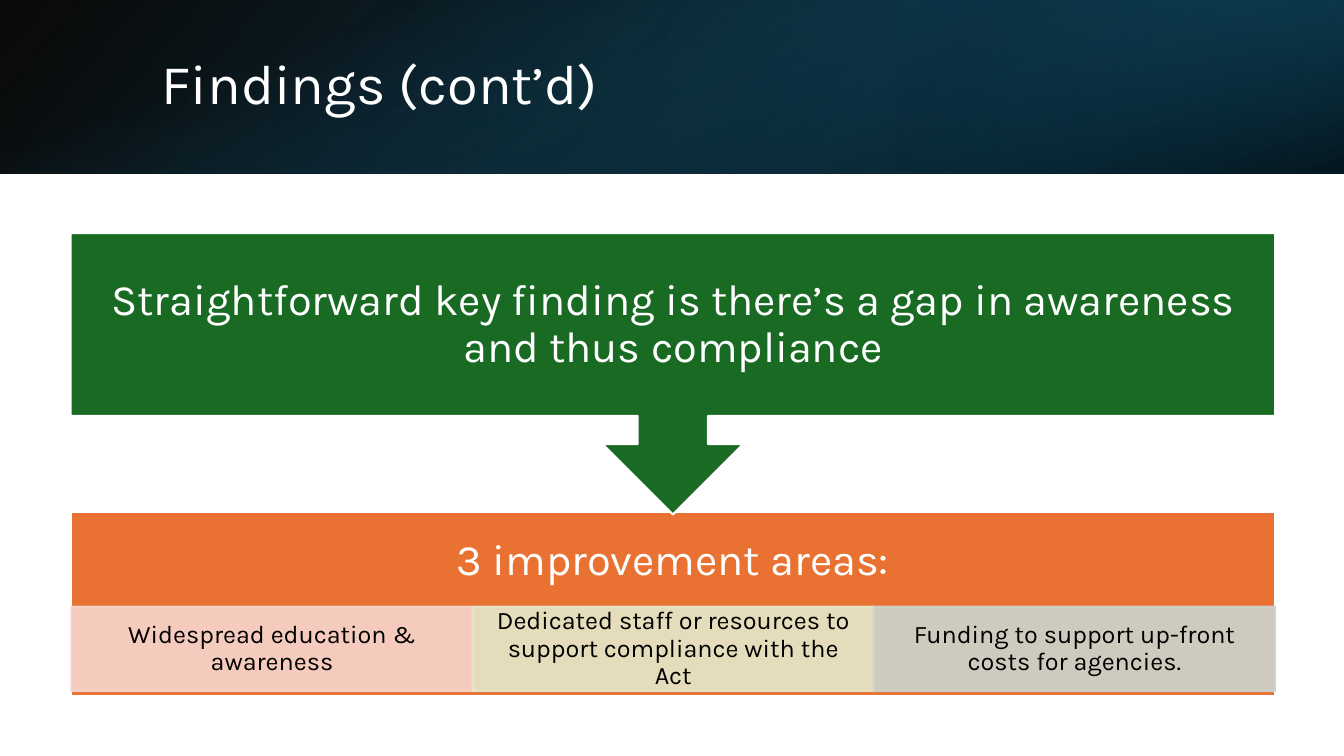
from lxml import etree
from pptx import Presentation
from pptx.dml.color import RGBColor
from pptx.enum.shapes import MSO_SHAPE
from pptx.enum.text import MSO_ANCHOR, PP_ALIGN
from pptx.oxml.ns import qn
from pptx.util import Pt

RECT = MSO_SHAPE.RECTANGLE
CALLOUT = MSO_SHAPE.DOWN_ARROW_CALLOUT
MIDDLE = MSO_ANCHOR.MIDDLE
LEFT = PP_ALIGN.LEFT
CENTER = PP_ALIGN.CENTER

WHITE = RGBColor(0xFF, 0xFF, 0xFF)
BLACK = RGBColor(0x00, 0x00, 0x00)
NAVY = RGBColor(0x0B, 0x30, 0x41)
DEEP = RGBColor(0x10, 0x48, 0x62)
TEAL = RGBColor(0x15, 0x60, 0x82)
GREEN = RGBColor(0x19, 0x6B, 0x24)
ORANGE = RGBColor(0xE9, 0x71, 0x32)
PINK = RGBColor(0xF7, 0xD5, 0xCE)
CREAM = RGBColor(0xE5, 0xE8, 0xCA)
SAGE = RGBColor(0xCC, 0xD4, 0xCD)

FONT = "Karla"
WIDE, HIGH = 960, 540
HEAD = 124
EDGE, SPAN = 50.4, 860.4
CELL = 286.6
AREAS = [
    ("Widespread education & awareness", PINK),
    ("Dedicated staff or resources to support compliance with the Act", CREAM),
    ("Funding to support up-front costs for agencies.", SAGE),
]


def place(shape, box):
    shape.left, shape.top, shape.width, shape.height = (Pt(n) for n in box)


def fade(shape, alphas):
    colors = shape.element.spPr.iter(qn("a:srgbClr"))
    for color, alpha in zip(colors, alphas):
        etree.SubElement(color, qn("a:alpha")).set("val", str(alpha * 1000))


def write(shape, text, size, color, pads, align=CENTER):
    frame = shape.text_frame
    frame.word_wrap = True
    frame.vertical_anchor = MIDDLE
    (frame.margin_left, frame.margin_top,
     frame.margin_right, frame.margin_bottom) = (Pt(n) for n in pads)
    frame.text = text
    para = frame.paragraphs[0]
    para.alignment = align
    para.line_spacing = 0.9
    font = para.runs[0].font
    font.name = FONT
    font.size = Pt(size)
    font.color.rgb = color


def add_band(slide, box, turn, flip, angle, stops):
    band = slide.shapes.add_shape(RECT, *(Pt(n) for n in box))
    band.shadow.inherit = False
    band.rotation = turn
    if flip:
        band.element.spPr.find(qn("a:xfrm")).set("flipH", "1")
    band.line.fill.background()
    band.fill.gradient()
    band.fill.gradient_angle = 360 - angle
    for stop, (spot, color, _) in zip(band.fill.gradient_stops, stops):
        stop.position = spot
        stop.color.rgb = color
    fade(band, [alpha for _, _, alpha in stops])


def add_block(slide, kind, box, fill, line):
    block = slide.shapes.add_shape(kind, *(Pt(n) for n in box))
    block.shadow.inherit = False
    block.fill.solid()
    block.fill.fore_color.rgb = fill
    block.line.color.rgb = line
    block.line.width = Pt(1.5)
    return block


def add_header(slide):
    add_band(slide, (0, 0, WIDE, HEAD), 0, True, 140,
             [(0, BLACK, 96), (1, DEEP, 100)])
    add_band(slide, (WIDE * 2 / 3, 0, WIDE / 3, HEAD), 180, True, 320,
             [(0.19, NAVY, 68), (1, TEAL, 79)])
    side = (WIDE - HEAD) / 2
    add_band(slide, (side, -side, HEAD, WIDE), 90, False, 340,
             [(0.23, TEAL, 0), (0.99, BLACK, 74)])
    title = slide.shapes.title
    title.element.getparent().append(title.element)
    place(title, (108, 27.4, 790.6, 69))
    write(title, "Findings (cont’d)", 40, WHITE, (7.2, 3.6, 7.2, 3.6), LEFT)


def add_areas(slide):
    panel = add_block(slide, RECT, (EDGE, 366, SPAN, 131), ORANGE, WHITE)
    write(panel, "3 improvement areas:", 31, WHITE, (17, 17, 17, 77.5))
    for i, (text, color) in enumerate(AREAS):
        box = (51 + i * CELL, 433.3, CELL, 60.3)
        cell = add_block(slide, RECT, box, color, color)
        fade(cell, (90, 90))
        write(cell, text, 18, BLACK, (10, 2, 10, 2))


def add_finding(slide):
    box = (EDGE, 166.5, SPAN, 201)
    block = add_block(slide, CALLOUT, box, GREEN, WHITE)
    write(block, "Straightforward key finding is there’s a gap in awareness "
          "and thus compliance", 31, WHITE, (17, 17, 17, 17))


def main():
    deck = Presentation()
    deck.slide_width, deck.slide_height = Pt(WIDE), Pt(HIGH)
    slide = deck.slides.add_slide(deck.slide_layouts[5])
    add_header(slide)
    add_areas(slide)
    add_finding(slide)
    deck.save("out.pptx")


if __name__ == "__main__":
    main()
